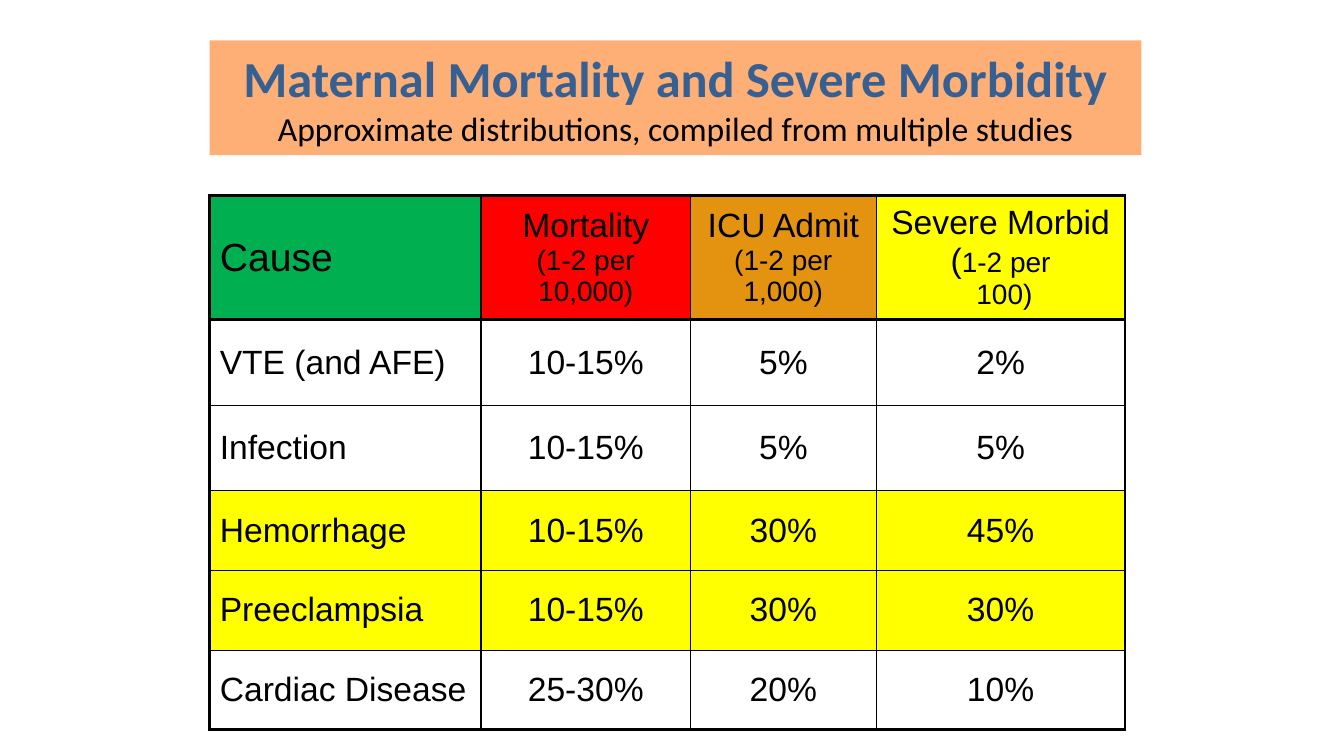
from lxml import etree
from pptx import Presentation
from pptx import util as u
from pptx.dml.color import RGBColor
from pptx.enum import shapes, text
from pptx.oxml.ns import qn

LEFT, TABLE_TOP = 2.08, 1.94
COLUMN_WIDTHS = [2.69, 2.08, 1.84, 2.47]
ROW_HEIGHTS = [1.23, 0.85, 0.85, 0.79, 0.79, 0.79]
THIN, THICK = 1, 2.25
BLACK, WHITE, YELLOW = "000000", "FFFFFF", "FFFF00"

# Each heading: fill, then lines made of (wording, size) pieces
HEADINGS = [
    ("00B050", [[("Cause", 28)]]),
    ("FF0000", [[("Mortality", 24)], [("(1-2 per 10,000)", 20)]]),
    ("E39310", [[("ICU Admit", 24)], [("(1-2 per 1,000)", 20)]]),
    (YELLOW, [[("Severe Morbid", 24)], [("(", 24), ("1-2 per", 20)], [(" 100)", 20)]]),
]
CAUSES = [
    ("VTE (and AFE)", "10-15%", "5%", "2%"),
    ("Infection", "10-15%", "5%", "5%"),
    ("Hemorrhage", "10-15%", "30%", "45%"),
    ("Preeclampsia", "10-15%", "30%", "30%"),
    ("Cardiac Disease", "25-30%", "20%", "10%"),
]


def color(hex_value):
    return RGBColor.from_string(hex_value)


def add_panel(slide, left, top, width, height, fill, outline=None):
    panel = slide.shapes.add_shape(
        shapes.MSO_SHAPE.RECTANGLE,
        *(u.Inches(length) for length in (left, top, width, height)))
    panel.shadow.inherit = False
    panel.fill.solid()
    panel.fill.fore_color.rgb = color(fill)
    if outline:
        panel.line.color.rgb = color(outline)
        panel.line.width = u.Pt(0.75)
    else:
        panel.line.fill.background()
    return panel


def add_run(paragraph, wording, size, font="Arial", ink=BLACK, bold=False):
    run = paragraph.add_run()
    run.text = wording
    for name, value in {"size": u.Pt(size), "name": font, "bold": bold}.items():
        setattr(run.font, name, value)
    run.font.color.rgb = color(ink)


def add_title(slide):
    banner = add_panel(slide, LEFT, 0.4, 9.24, 1.14, "FEAF76")
    banner.text_frame.word_wrap = True
    banner.text_frame.vertical_anchor = text.MSO_ANCHOR.MIDDLE
    paragraph = banner.text_frame.paragraphs[0]
    paragraph.alignment = text.PP_ALIGN.CENTER
    add_run(paragraph, "Maternal Mortality and Severe Morbidity", 36, "Calibri", "376092", True)
    paragraph.add_line_break()
    add_run(paragraph, "Approximate distributions, compiled from multiple studies", 24, "Calibri")


def set_borders(cell, widths):
    """Draw black borders; widths maps L, R, T, B (in that order) to points."""
    properties = cell._tc.get_or_add_tcPr()
    for side, width in widths.items():
        line = etree.SubElement(properties, qn(f"a:ln{side}"), w=str(u.Pt(width)))
        fill = etree.SubElement(line, qn("a:solidFill"))
        etree.SubElement(fill, qn("a:srgbClr"), val=BLACK)


def fill_cell(cell, lines, centered, fill):
    cell.vertical_anchor = text.MSO_ANCHOR.MIDDLE
    paragraph = cell.text_frame.paragraphs[0]
    paragraph.alignment = text.PP_ALIGN.CENTER if centered else text.PP_ALIGN.LEFT
    for number, pieces in enumerate(lines):
        if number:
            paragraph.add_line_break()
        for wording, size in pieces:
            add_run(paragraph, wording, size)
    if fill:
        cell.fill.solid()
        cell.fill.fore_color.rgb = color(fill)
    else:
        cell.fill.background()


def add_cause_table(slide):
    table = slide.shapes.add_table(
        len(ROW_HEIGHTS), len(COLUMN_WIDTHS), u.Inches(LEFT), u.Inches(TABLE_TOP),
        u.Inches(sum(COLUMN_WIDTHS)), u.Inches(sum(ROW_HEIGHTS))).table
    table.first_row = table.horz_banding = False
    for column, width in zip(table.columns, COLUMN_WIDTHS):
        column.width = u.Inches(width)
    for row, height in zip(table.rows, ROW_HEIGHTS):
        row.height = u.Inches(height)

    last_row, last_column = len(ROW_HEIGHTS) - 1, len(COLUMN_WIDTHS) - 1
    for r in range(last_row + 1):
        for c in range(last_column + 1):
            if r == 0:
                fill, lines = HEADINGS[c]
            else:
                fill = WHITE if r == last_row else None
                lines = [[(CAUSES[r - 1][c], 24)]]
            cell = table.cell(r, c)
            set_borders(cell, {
                "L": THICK if c == 0 else THIN,
                "R": THICK if c == last_column else THIN,
                "T": THICK if r <= 1 else THIN,
                "B": THICK if r in (0, last_row) else THIN,
            })
            fill_cell(cell, lines, c > 0, fill)


def main():
    deck = Presentation()
    deck.slide_width, deck.slide_height = u.Inches(13.33), u.Inches(7.5)
    slide = deck.slides.add_slide(deck.slide_layouts[6])
    # Yellow band shows through the unfilled hemorrhage and preeclampsia rows
    add_panel(slide, LEFT, TABLE_TOP + sum(ROW_HEIGHTS[:3]),
              sum(COLUMN_WIDTHS), sum(ROW_HEIGHTS[3:5]), YELLOW, BLACK)
    add_title(slide)
    add_cause_table(slide)
    deck.save("out.pptx")


if __name__ == "__main__":
    main()
